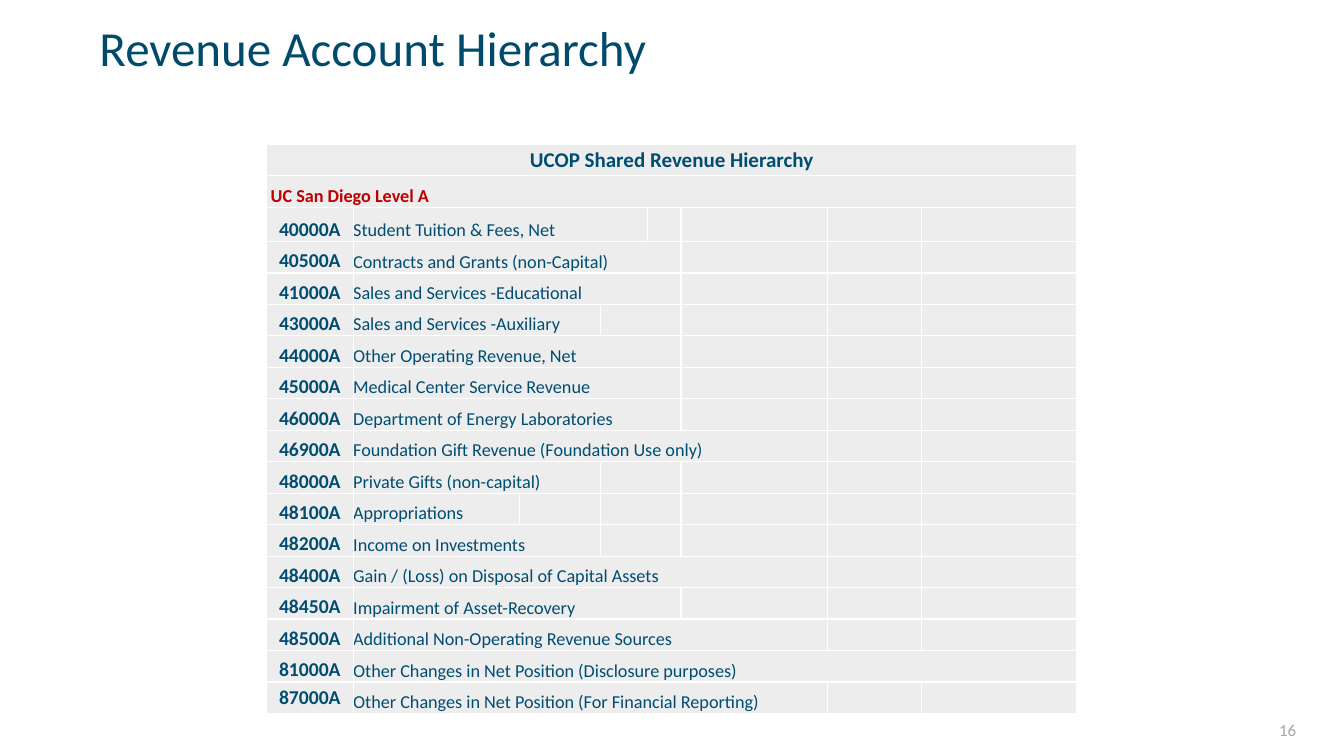
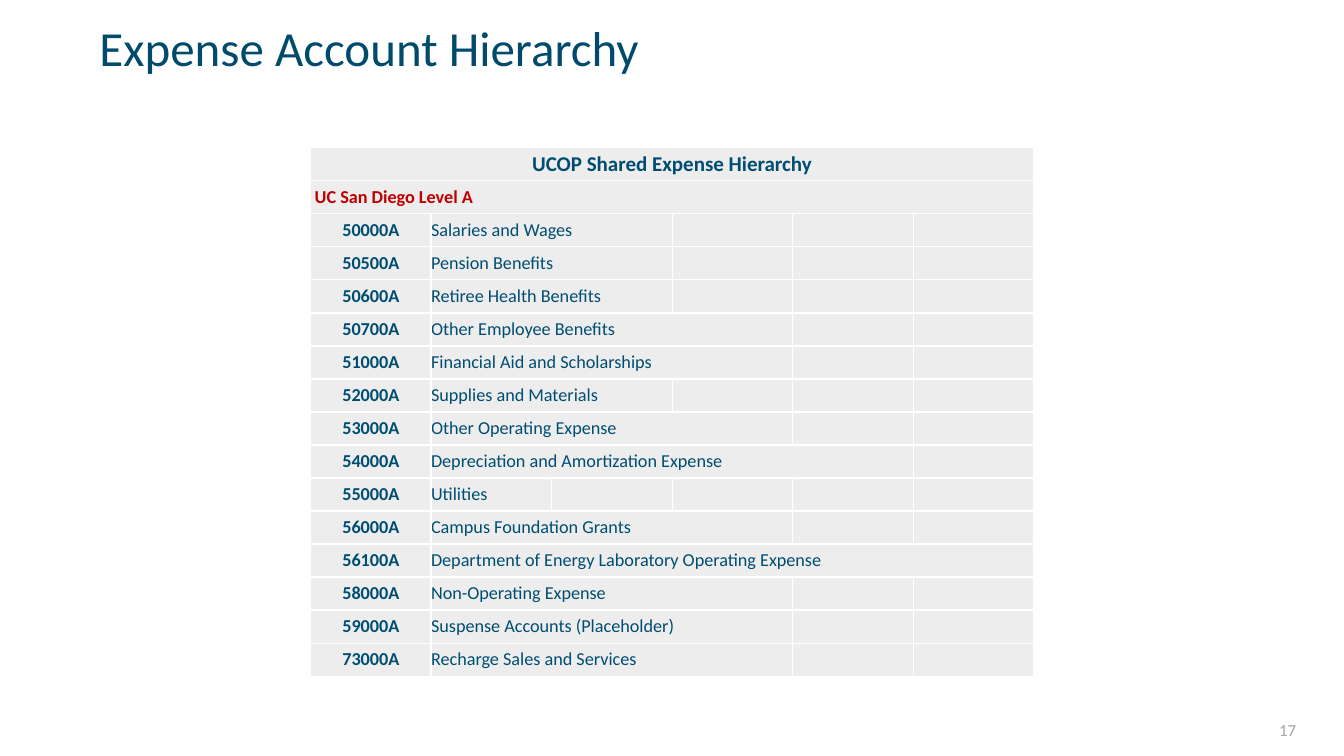
from dataclasses import dataclass

from lxml.etree import SubElement
from pptx import Presentation
from pptx.dml.color import RGBColor
from pptx.enum.text import MSO_ANCHOR, PP_ALIGN
from pptx.oxml import parse_xml
from pptx.oxml.ns import nsdecls
from pptx.util import Pt


@dataclass(frozen=True)
class Theme:
    font: str = "Calibri"
    title_color: str = "004A6C"
    text_color: str = "004D72"
    level_color: str = "C00000"
    number_color: str = "A5A5A5"
    cell_color: str = "EDEDED"
    border_color: str = "FFFFFF"
    title_size: int = 35
    heading_size: int = 15
    label_size: int = 13
    number_size: int = 12
    border_width: int = 1


@dataclass(frozen=True)
class Hierarchy:
    title: str
    number: int
    heading: str
    box: tuple  # left, top, width, height
    columns: list  # widths
    first_account_height: float  # height of the first account row
    code_size: int
    anchor: MSO_ANCHOR
    last_code_anchor: MSO_ANCHOR
    spacer: tuple  # neighbouring columns joined when both are empty
    accounts: list  # code, label, columns the label spans


THEME = Theme()
SLIDE_SIZE = (960, 540)
TITLE_BOX = (64, 13.7, 535, 59)
NUMBER_BOX = (717, 507, 216, 28.8)
LEVEL = "UC San Diego Level A"

REVENUE = Hierarchy(
    title="Revenue Account Hierarchy",
    number=16,
    heading="UCOP Shared Revenue Hierarchy",
    box=(190.4, 103, 578.9, 406.8),
    columns=[61.9, 118.8, 57.6, 34, 23.8, 104.4, 67.6, 110.8],
    first_account_height=24.5,
    code_size=14,
    anchor=MSO_ANCHOR.BOTTOM,
    last_code_anchor=MSO_ANCHOR.MIDDLE,
    spacer=(3, 4),
    accounts=[
        ("40000A", "Student Tuition & Fees, Net", 3),
        ("40500A", "Contracts and Grants (non-Capital)", 4),
        ("41000A", "Sales and Services -Educational", 4),
        ("43000A", "Sales and Services -Auxiliary", 2),
        ("44000A", "Other Operating Revenue, Net", 4),
        ("45000A", "Medical Center Service Revenue", 4),
        ("46000A", "Department of Energy Laboratories", 4),
        ("46900A", "Foundation Gift Revenue (Foundation Use only)", 5),
        ("48000A", "Private Gifts (non-capital)", 2),
        ("48100A", "Appropriations", 1),
        ("48200A", "Income on Investments", 2),
        ("48400A", "Gain / (Loss) on Disposal of Capital Assets", 5),
        ("48450A", "Impairment of Asset-Recovery", 4),
        ("48500A", "Additional Non-Operating Revenue Sources", 5),
        ("81000A", "Other Changes in Net Position (Disclosure purposes)", 7),
        ("87000A", "Other Changes in Net Position (For Financial Reporting)", 5),
    ],
)

EXPENSE = Hierarchy(
    title="Expense Account Hierarchy",
    number=17,
    heading="UCOP Shared Expense Hierarchy",
    box=(221.8, 105.6, 516.6, 377.6),
    columns=[86.1] * 6,
    first_account_height=23.6,
    code_size=13,
    anchor=MSO_ANCHOR.MIDDLE,
    last_code_anchor=MSO_ANCHOR.MIDDLE,
    spacer=(),
    accounts=[
        ("50000A", "Salaries and Wages", 2),
        ("50500A", "Pension Benefits", 2),
        ("50600A", "Retiree Health Benefits", 2),
        ("50700A", "Other Employee Benefits", 3),
        ("51000A", "Financial Aid and Scholarships", 3),
        ("52000A", "Supplies and Materials", 2),
        ("53000A", "Other Operating Expense", 3),
        ("54000A", "Depreciation and Amortization Expense", 4),
        ("55000A", "Utilities", 1),
        ("56000A", "Campus Foundation Grants", 3),
        ("56100A", "Department of Energy Laboratory Operating Expense", 5),
        ("58000A", "Non-Operating Expense", 3),
        ("59000A", "Suspense Accounts (Placeholder)", 3),
        ("73000A", "Recharge Sales and Services", 3),
    ],
)


def points(values):
    return [Pt(value) for value in values]


def style_font(font, size, color, bold=False):
    font.name = THEME.font
    font.size = Pt(size)
    font.bold = bold
    font.color.rgb = RGBColor.from_string(color)


def add_text(slide, box, text, size, color, align, anchor, line_spacing=1.0):
    shape = slide.shapes.add_textbox(*points(box))
    frame = shape.text_frame
    frame.word_wrap = True
    frame.vertical_anchor = anchor
    frame.text = text
    paragraph = frame.paragraphs[0]
    paragraph.alignment = align
    paragraph.line_spacing = line_spacing
    style_font(paragraph.runs[0].font, size, color)


# Table cells
def style_blank_cell(cell):
    properties = cell._tc.get_or_add_tcPr()
    for side in ("lnL", "lnR", "lnT", "lnB"):
        line = parse_xml(f'<a:{side} {nsdecls("a")} w="{Pt(THEME.border_width)}"/>')
        fill = SubElement(line, f"{{{line.nsmap['a']}}}solidFill")
        SubElement(fill, f"{{{line.nsmap['a']}}}srgbClr", val=THEME.border_color)
        properties.append(line)
    cell.fill.solid()
    cell.fill.fore_color.rgb = RGBColor.from_string(THEME.cell_color)
    cell.margin_left = cell.margin_right = cell.margin_top = cell.margin_bottom = 0
    style_font(cell.text_frame.paragraphs[0].font, THEME.label_size, THEME.text_color)


def fill_cell(cell, text, size, color, bold, align, anchor):
    cell.text_frame.text = text
    cell.vertical_anchor = anchor
    paragraph = cell.text_frame.paragraphs[0]
    paragraph.alignment = align
    style_font(paragraph.runs[0].font, size, color, bold)


def merge_row(table, row, first, last):
    if last > first:
        table.cell(row, first).merge(table.cell(row, last))


def add_hierarchy_table(slide, box, hierarchy):
    row_count = len(hierarchy.accounts) + 2
    last_column = len(hierarchy.columns) - 1
    table = slide.shapes.add_table(row_count, last_column + 1, *points(box)).table
    table.first_row = table.horz_banding = False

    # Grid
    for column, width in zip(table.columns, hierarchy.columns):
        column.width = Pt(width)
    row_height = (box[3] - hierarchy.first_account_height) / (row_count - 1)
    for index, row in enumerate(table.rows):
        row.height = Pt(hierarchy.first_account_height if index == 2 else row_height)
    for cell in table.iter_cells():
        style_blank_cell(cell)

    # Heading and level rows
    for row in range(2):
        merge_row(table, row, 0, last_column)
    fill_cell(table.cell(0, 0), hierarchy.heading, THEME.heading_size,
              THEME.text_color, True, PP_ALIGN.CENTER, MSO_ANCHOR.MIDDLE)
    fill_cell(table.cell(1, 0), LEVEL, THEME.label_size,
              THEME.level_color, True, PP_ALIGN.LEFT, hierarchy.anchor)
    table.cell(1, 0).margin_left = Pt(3)

    # Account rows
    for row, (code, label, span) in enumerate(hierarchy.accounts, start=2):
        last_row = row == row_count - 1
        code_anchor = hierarchy.last_code_anchor if last_row else hierarchy.anchor
        merge_row(table, row, 1, span)
        if hierarchy.spacer and span < hierarchy.spacer[0]:
            merge_row(table, row, *hierarchy.spacer)
        fill_cell(table.cell(row, 0), code, hierarchy.code_size,
                  THEME.text_color, True, PP_ALIGN.CENTER, code_anchor)
        fill_cell(table.cell(row, 1), label, THEME.label_size,
                  THEME.text_color, False, PP_ALIGN.LEFT, hierarchy.anchor)


def add_hierarchy_slide(presentation, hierarchy):
    slide = presentation.slides.add_slide(presentation.slide_layouts[6])
    add_text(slide, TITLE_BOX, hierarchy.title, THEME.title_size,
             THEME.title_color, PP_ALIGN.LEFT, MSO_ANCHOR.TOP, 0.9)
    add_hierarchy_table(slide, hierarchy.box, hierarchy)
    add_text(slide, NUMBER_BOX, str(hierarchy.number), THEME.number_size,
             THEME.number_color, PP_ALIGN.RIGHT, MSO_ANCHOR.MIDDLE)


def main():
    presentation = Presentation()
    presentation.slide_width, presentation.slide_height = points(SLIDE_SIZE)
    for hierarchy in (REVENUE, EXPENSE):
        add_hierarchy_slide(presentation, hierarchy)
    presentation.save("out.pptx")


if __name__ == "__main__":
    main()
